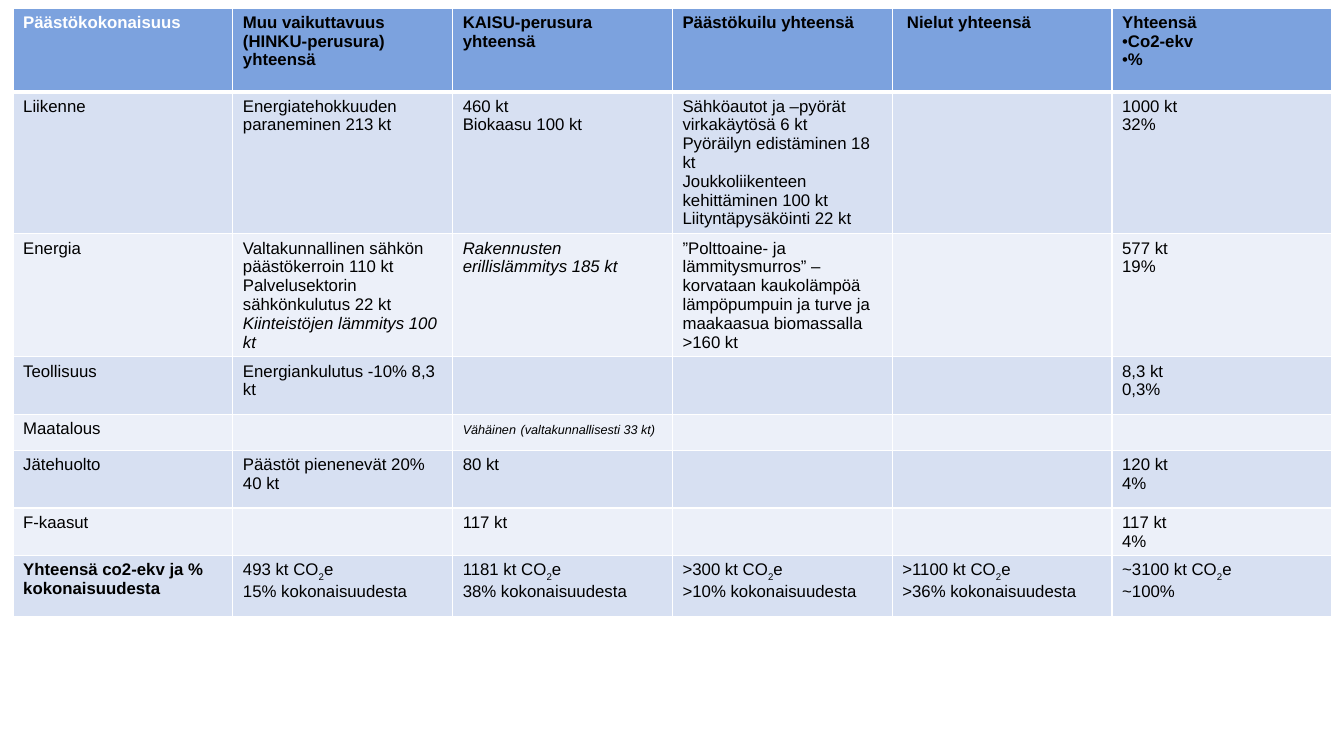
from dataclasses import dataclass, replace

from lxml import etree
from pptx import Presentation
from pptx import util as u
from pptx.dml.color import RGBColor
from pptx.oxml import ns

FONT = "Arial"
WHITE, BLACK = "FFFFFF", "000000"
HEADER_FILL, DARK_BAND, LIGHT_BAND = "7CA2DE", "D7E0F2", "ECF0F9"
COLUMN_WIDTH = 2.18
ROW_HEIGHTS = [0.83, 1.41, 1.22, 0.57, 0.36, 0.57, 0.47, 0.6]


@dataclass(frozen=True)
class Span:
    text: str
    size: float = 12
    bold: bool = False
    italic: bool = False
    subscript: bool = False
    color: str = BLACK


@dataclass(frozen=True)
class Line:
    spans: tuple[Span, ...]
    bullet: bool = False


def plain(*texts: str) -> list[Line]:
    return [Line((Span(text),)) for text in texts]


def bold(text: str, color: str = BLACK, bullet: bool = False) -> Line:
    return Line((Span(text, bold=True, color=color),), bullet)


def italic(text: str) -> Line:
    return Line((Span(text, italic=True),))


def total(amount: str, share: str) -> list[Line]:
    emission = Line((Span(f"{amount} kt CO"), Span("2", subscript=True), Span("e")))
    return [emission, *plain(share)]


SMALL = Span("Vähäinen", size=9, italic=True)

ROWS: list[list[list[Line]]] = [
    [
        [bold("Päästökokonaisuus", WHITE)],
        [bold("Muu vaikuttavuus (HINKU-perusura) yhteensä")],
        [bold("KAISU-perusura yhteensä")],
        [bold("Päästökuilu yhteensä")],
        [bold(" Nielut yhteensä")],
        [bold("Yhteensä"), bold("Co2-ekv", bullet=True), bold("%", bullet=True)],
    ],
    [
        plain("Liikenne"),
        plain("Energiatehokkuuden paraneminen 213 kt"),
        plain("460 kt", "Biokaasu 100 kt"),
        plain("Sähköautot ja –pyörät virkakäytösä 6 kt",
              "Pyöräilyn edistäminen 18 kt",
              "Joukkoliikenteen kehittäminen 100 kt",
              "Liityntäpysäköinti 22 kt"),
        [],
        plain("1000 kt", "32%"),
    ],
    [
        plain("Energia"),
        [*plain("Valtakunnallinen sähkön päästökerroin 110 kt",
                "Palvelusektorin sähkönkulutus 22 kt"),
         italic("Kiinteistöjen lämmitys 100 kt")],
        [italic("Rakennusten erillislämmitys 185 kt")],
        plain("”Polttoaine- ja lämmitysmurros” – korvataan kaukolämpöä "
              "lämpöpumpuin ja turve ja maakaasua biomassalla >160 kt"),
        [],
        plain("577 kt", "19%"),
    ],
    [plain("Teollisuus"), plain("Energiankulutus -10% 8,3 kt"), [], [], [],
     plain("8,3 kt", "0,3%")],
    [
        plain("Maatalous"),
        [],
        [Line((SMALL, Span(" ", italic=True),
               replace(SMALL, text="(valtakunnallisesti 33 kt)")))],
        [], [], [],
    ],
    [plain("Jätehuolto"), plain("Päästöt pienenevät 20% 40 kt"), plain("80 kt"),
     [], [], plain("120 kt", "4%")],
    [plain("F-kaasut"), [], plain("117 kt"), [], [], plain("117 kt", "4%")],
    [
        [bold("Yhteensä co2-ekv ja % kokonaisuudesta")],
        total("493", "15% kokonaisuudesta"),
        total("1181", "38% kokonaisuudesta"),
        total(">300", ">10% kokonaisuudesta"),
        total(">1100", ">36% kokonaisuudesta"),
        total("~3100", "~100%"),
    ],
]


def rgb(value: str) -> RGBColor:
    return RGBColor.from_string(value)


def add_child(parent, tag: str, **attributes: str):
    return etree.SubElement(parent, ns.qn(f"a:{tag}"), **attributes)


def add_bullet(para) -> None:
    properties = para._p.get_or_add_pPr()
    properties.set("marL", "0")
    properties.set("indent", "0")
    add_child(add_child(properties, "buClr"), "srgbClr", val=BLACK)
    add_child(properties, "buFont", typeface=FONT)
    add_child(properties, "buChar", char="•")


def write_line(para, line: Line) -> None:
    if line.bullet:
        add_bullet(para)
    for part in line.spans:
        span = para.add_run()
        span.text = part.text
        font = span.font
        font.name, font.size = FONT, u.Pt(part.size)
        font.bold, font.italic = part.bold, part.italic
        font.color.rgb = rgb(part.color)
        if part.subscript:
            span._r.get_or_add_rPr().set("baseline", "-25000")


def draw_borders(cell, row: int) -> None:
    properties = cell._tc.get_or_add_tcPr()
    widths = {"lnL": 1, "lnR": 1, "lnT": 3 if row == 1 else 1,
              "lnB": 3 if row == 0 else 1}
    for tag, width in widths.items():
        border = add_child(properties, tag, w=str(u.Pt(width)))
        add_child(add_child(border, "solidFill"), "srgbClr", val=WHITE)


def fill_cell(cell, lines: list[Line], row: int) -> None:
    draw_borders(cell, row)
    band = DARK_BAND if row % 2 else LIGHT_BAND
    cell.fill.solid()
    cell.fill.fore_color.rgb = rgb(HEADER_FILL if row == 0 else band)
    frame = cell.text_frame
    for index, line in enumerate(lines):
        write_line(frame.add_paragraph() if index else frame.paragraphs[0], line)
    if not lines:
        # Empty cells keep the body size so that short rows stay short
        add_child(frame.paragraphs[0]._p, "endParaRPr", sz="1200")


def main() -> None:
    deck = Presentation()
    deck.slide_width, deck.slide_height = u.Inches(13.33), u.Inches(7.5)
    page = deck.slides.add_slide(deck.slide_layouts[6])

    # Emission table
    columns = len(ROWS[0])
    table = page.shapes.add_table(
        len(ROWS), columns, u.Inches(0.13), u.Inches(0.08),
        u.Inches(COLUMN_WIDTH * columns), u.Inches(sum(ROW_HEIGHTS))).table
    table.first_row = table.horz_banding = False
    for column in table.columns:
        column.width = u.Inches(COLUMN_WIDTH)
    for row, (height, cells) in enumerate(zip(ROW_HEIGHTS, ROWS)):
        table.rows[row].height = u.Inches(height)
        for column, lines in enumerate(cells):
            fill_cell(table.cell(row, column), lines, row)

    deck.save("out.pptx")


if __name__ == "__main__":
    main()
